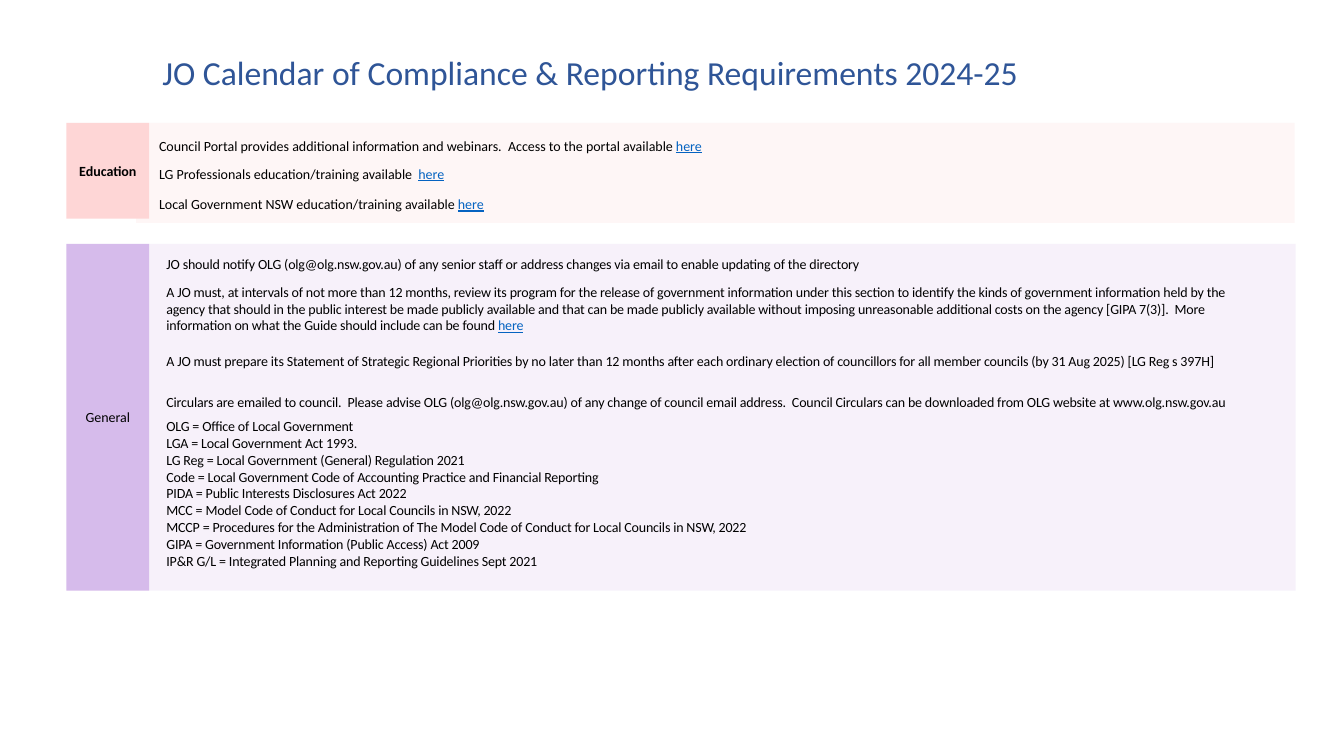
from dataclasses import dataclass

from lxml import etree
from pptx import Presentation
from pptx.dml.color import RGBColor
from pptx.enum.shapes import MSO_SHAPE as SHAPE
from pptx.enum.text import MSO_ANCHOR as ANCHOR, MSO_AUTO_SIZE as AUTO, PP_ALIGN as ALIGN
from pptx.oxml.ns import qn
from pptx.util import Inches, Pt

WIDTH, HEIGHT = Inches(13.33), Inches(7.5)


@dataclass(frozen=True)
class Theme:
    font: str = "Calibri"
    title_size: int = 24
    body_size: int = 10
    title: str = "2F5597"
    text: str = "000000"
    link: str = "0563C1"
    education: str = "FED6D6"
    general: str = "D6BBEB"
    general_band: str = "D7BCEA"
    band_alpha: int = 20
    tight: int = -10  # letter spacing in hundredths of a point


THEME = Theme()
NO_INSET, INSET = (0, 0), (0.1, 0.05)

# Columns and rows, in percent of the slide's width and height
LABEL_X, LABEL_W = 4.95, 6.15
BAND_X = LABEL_X + LABEL_W
NOTE_X, NOTE_H = 12.38, 2.27
EDUCATION_Y, EDUCATION_H = 16.27, 12.67
GENERAL_Y, GENERAL_H = 32.27, 45.87

# Each note: row, height, width, text, link word
EDUCATION = [
    (17.47, 59.79, "Council Portal provides additional information and webinars.  "
     "Access to the portal available ", "here"),
    (21.2, 51, "LG Professionals education/training available  ", "here"),
    (25.2, 51, "Local Government NSW education/training available ", "here"),
]
GENERAL = [
    (33.73, NOTE_H, 64, "JO should notify OLG (olg@olg.nsw.gov.au) of any senior staff or "
     "address changes via email to enable updating of the directory", ""),
    (37.47, 6.67, 79.9, "A JO must, at intervals of not more than 12 months, review its program "
     "for the release of government information under this section to identify the kinds of "
     "government information held by the agency that should in the public interest be made "
     "publicly available and that can be made publicly available without imposing unreasonable "
     "additional costs on the agency [GIPA 7(3)].  More information on what the Guide should "
     "include can be found ", "here"),
    (46.67, NOTE_H, 79.9, "A JO must prepare its Statement of Strategic Regional Priorities by no "
     "later than 12 months after each ordinary election of councillors for all member councils "
     "(by 31 Aug 2025) [LG Reg s 397H]", ""),
    (52, NOTE_H, 84, "Circulars are emailed to council.  Please advise OLG (olg@olg.nsw.gov.au) "
     "of any change of council email address.  Council Circulars can be downloaded from OLG "
     "website at www.olg.nsw.gov.au", ""),
]
GLOSSARY = [
    "OLG = Office of Local Government",
    "LGA = Local Government Act 1993.",
    "LG Reg = Local Government (General) Regulation 2021",
    "Code = Local Government Code of Accounting Practice and Financial Reporting",
    "PIDA = Public Interests Disclosures Act 2022",
    "MCC = Model Code of Conduct for Local Councils in NSW, 2022",
    "MCCP = Procedures for the Administration of The Model Code of Conduct for Local Councils "
    "in NSW, 2022",
    "GIPA = Government Information (Public Access) Act 2009",
    "IP&R G/L = Integrated Planning and Reporting Guidelines Sept 2021",
]


def box(x, y, w, h):
    """Turn percent of the slide into left, top, width, height."""
    return [int(share * side / 100) for share, side in zip((x, y, w, h), (WIDTH, HEIGHT) * 2)]


def set_attrs(obj, values):
    for name, value in values.items():
        setattr(obj, name, value)


def place(sp, area):
    set_attrs(sp, dict(zip(("left", "top", "width", "height"), box(*area))))


def set_frame(tf, anchor, inset=INSET):
    dx, dy = (Inches(v) for v in inset)
    set_attrs(tf, dict(word_wrap=True, auto_size=AUTO.NONE, vertical_anchor=anchor,
                       margin_left=dx, margin_right=dx, margin_top=dy, margin_bottom=dy))


def add_run(p, text, color=THEME.text, spacing=0, **extra):
    r = p.add_run()
    r.text = text
    set_attrs(r.font, dict(name=THEME.font, size=Pt(THEME.body_size), **extra))
    r.font.color.rgb = RGBColor.from_string(color)
    if spacing:
        r.font._element.set("spc", str(spacing))


def add_rect(s, area, color, alpha=None):
    sp = s.shapes.add_shape(SHAPE.RECTANGLE, *box(*area))
    sp.shadow.inherit = False
    sp.line.fill.background()
    sp.fill.solid()
    sp.fill.fore_color.rgb = RGBColor.from_string(color)
    if alpha is not None:
        clr = sp._element.spPr.find(qn("a:solidFill"))[0]
        etree.SubElement(clr, qn("a:alpha")).set("val", str(alpha * 1000))
    return sp


def add_label(s, y, h, text, color, bold=False):
    tf = add_rect(s, (LABEL_X, y, LABEL_W, h), color).text_frame
    set_frame(tf, ANCHOR.MIDDLE)
    tf.paragraphs[0].alignment = ALIGN.CENTER
    add_run(tf.paragraphs[0], text, bold=bold)


def add_note(s, area, text, link, anchor, inset, spacing=0):
    tf = s.shapes.add_textbox(*box(*area)).text_frame
    set_frame(tf, anchor, inset)
    add_run(tf.paragraphs[0], text, spacing=spacing)
    if link:
        add_run(tf.paragraphs[0], link, THEME.link, spacing, underline=True)


def fill_title(sp, text):
    place(sp, (7.05, 6.13, 73.74, 6.67))
    set_frame(sp.text_frame, ANCHOR.TOP)
    p = sp.text_frame.paragraphs[0]
    p.alignment = ALIGN.CENTER
    add_run(p, text, THEME.title)
    p.runs[0].font.size = Pt(THEME.title_size)


def fill_glossary(sp, lines):
    place(sp, (NOTE_X, 55.2, 45.46, 20.13))
    tf = sp.text_frame
    set_frame(tf, ANCHOR.MIDDLE, NO_INSET)
    for i, line in enumerate(lines):
        p = tf.add_paragraph() if i else tf.paragraphs[0]
        p.space_before = Pt(0)
        pPr = p._p.get_or_add_pPr()
        pPr.set("marL", "0")
        pPr.set("indent", "0")
        etree.SubElement(pPr, qn("a:buNone"))
        add_run(p, line, spacing=THEME.tight)


def main():
    prs = Presentation()
    prs.slide_width, prs.slide_height = WIDTH, HEIGHT
    s = prs.slides.add_slide(prs.slide_layouts[1])
    title, glossary = s.placeholders

    # Title
    fill_title(title, "JO Calendar of Compliance & Reporting Requirements 2024-25")

    # General section
    add_rect(s, (BAND_X, GENERAL_Y, 85.3, GENERAL_H), THEME.general_band, THEME.band_alpha)
    add_label(s, GENERAL_Y, GENERAL_H, "General", THEME.general)
    for y, h, w, text, link in GENERAL:
        add_note(s, (NOTE_X, y, w, h), text, link, ANCHOR.MIDDLE, NO_INSET, THEME.tight)
    fill_glossary(glossary, GLOSSARY)
    s.shapes._spTree.append(glossary._element)  # bring in front of the band

    # Education section
    add_label(s, EDUCATION_Y, EDUCATION_H, "Education", THEME.education, bold=True)
    add_rect(s, (10.13, EDUCATION_Y, 86.2, 13.2), THEME.education, THEME.band_alpha)
    for y, w, text, link in EDUCATION:
        add_note(s, (BAND_X, y, w, 3.6), text, link, ANCHOR.TOP, INSET)

    prs.save("out.pptx")


if __name__ == "__main__":
    main()
